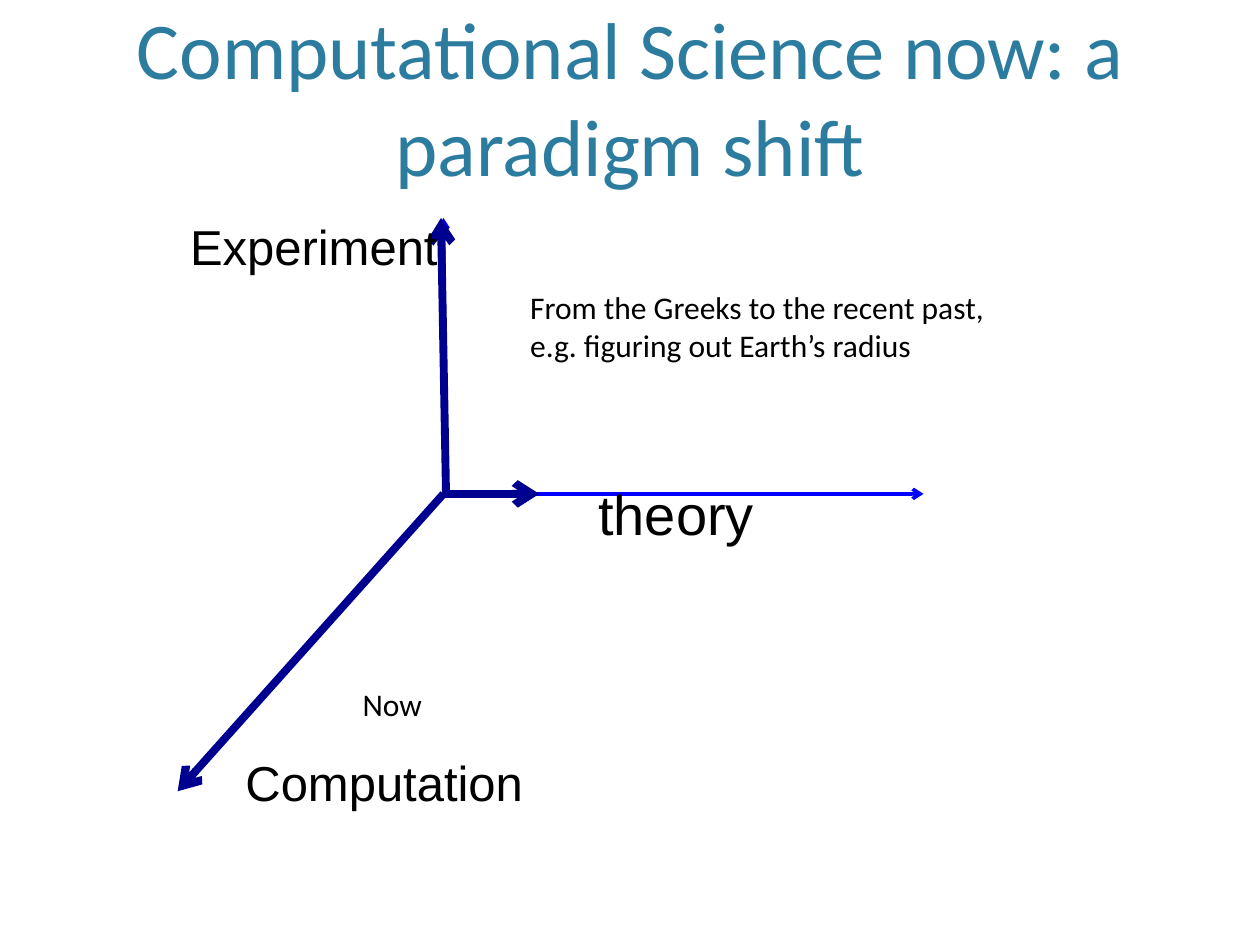
from lxml import etree
from pptx import Presentation
from pptx.dml.color import RGBColor
from pptx.enum.shapes import MSO_CONNECTOR
from pptx.enum.text import MSO_ANCHOR, PP_ALIGN
from pptx.oxml.ns import qn
from pptx.util import Inches, Pt

LINE = MSO_CONNECTOR.STRAIGHT
BOTTOM = MSO_ANCHOR.BOTTOM
CENTER = PP_ALIGN.CENTER

TITLE = "Computational Science now: a paradigm shift"
HUB = (3.54, 3.92)
NEAR = (3.52, 3.92)
THIN = ("0000FF", 2)
BOLD = ("000090", 4.5)
AXES = [
    (HUB, (3.52, 1.73), THIN),
    (HUB, (7.33, 3.92), THIN),
    (NEAR, (1.41, 6.28), BOLD),
    (HUB, (3.5, 1.73), BOLD),
    (NEAR, (4.28, 3.92), BOLD),
]
LABELS = [
    (["theory"], (4.65, 3.76, 1.45, 0.64), "Arial", 32),
    (["Experiment"], (1.41, 1.67, 2.19, 0.57), "Arial", 28),
    (["From the Greeks to the recent past,", "e.g. figuring out Earth’s radius"],
     (4.11, 2.24, 4.44, 0.71), "Calibri", 18),
    (["Computation"], (1.85, 5.92, 2.43, 0.57), "Arial", 28),
    (["Now"], (2.78, 5.39, 0.72, 0.4), "Calibri", 18),
]


def color(code):
    return RGBColor.from_string(code)


def style(frame, face, size, code):
    for para in frame.paragraphs:
        for run in para.runs:
            run.font.name = face
            run.font.size = Pt(size)
            run.font.color.rgb = color(code)


def add_title(slide):
    title = slide.shapes.title
    title.left, title.top = Inches(0.6), Inches(0.12)
    title.width, title.height = Inches(8.8), Inches(1.46)
    frame = title.text_frame
    frame.text = TITLE
    frame.word_wrap = True
    frame.vertical_anchor = BOTTOM
    frame.paragraphs[0].alignment = CENTER
    style(frame, "Calibri", 46, "2C7C9F")


def add_axis(slide, start, end, look):
    code, width = look
    axis = slide.shapes.add_connector(LINE, *map(Inches, start + end))
    axis.line.color.rgb = color(code)
    axis.line.width = Pt(width)
    etree.SubElement(axis.line._get_or_add_ln(), qn("a:tailEnd"), type="arrow")
    etree.SubElement(axis._element.spPr, qn("a:effectLst"))


def add_label(slide, lines, box, face, size):
    frame = slide.shapes.add_textbox(*map(Inches, box)).text_frame
    frame.text = "\n".join(lines)
    frame.word_wrap = False
    style(frame, face, size, "000000")


def main():
    """Build the slide on the three axes of science."""
    deck = Presentation()
    deck.slide_width, deck.slide_height = Inches(10), Inches(7.5)
    slide = deck.slides.add_slide(deck.slide_layouts[5])
    add_title(slide)
    for axis in AXES:
        add_axis(slide, *axis)
    for label in LABELS:
        add_label(slide, *label)
    deck.save("out.pptx")


if __name__ == "__main__":
    main()
